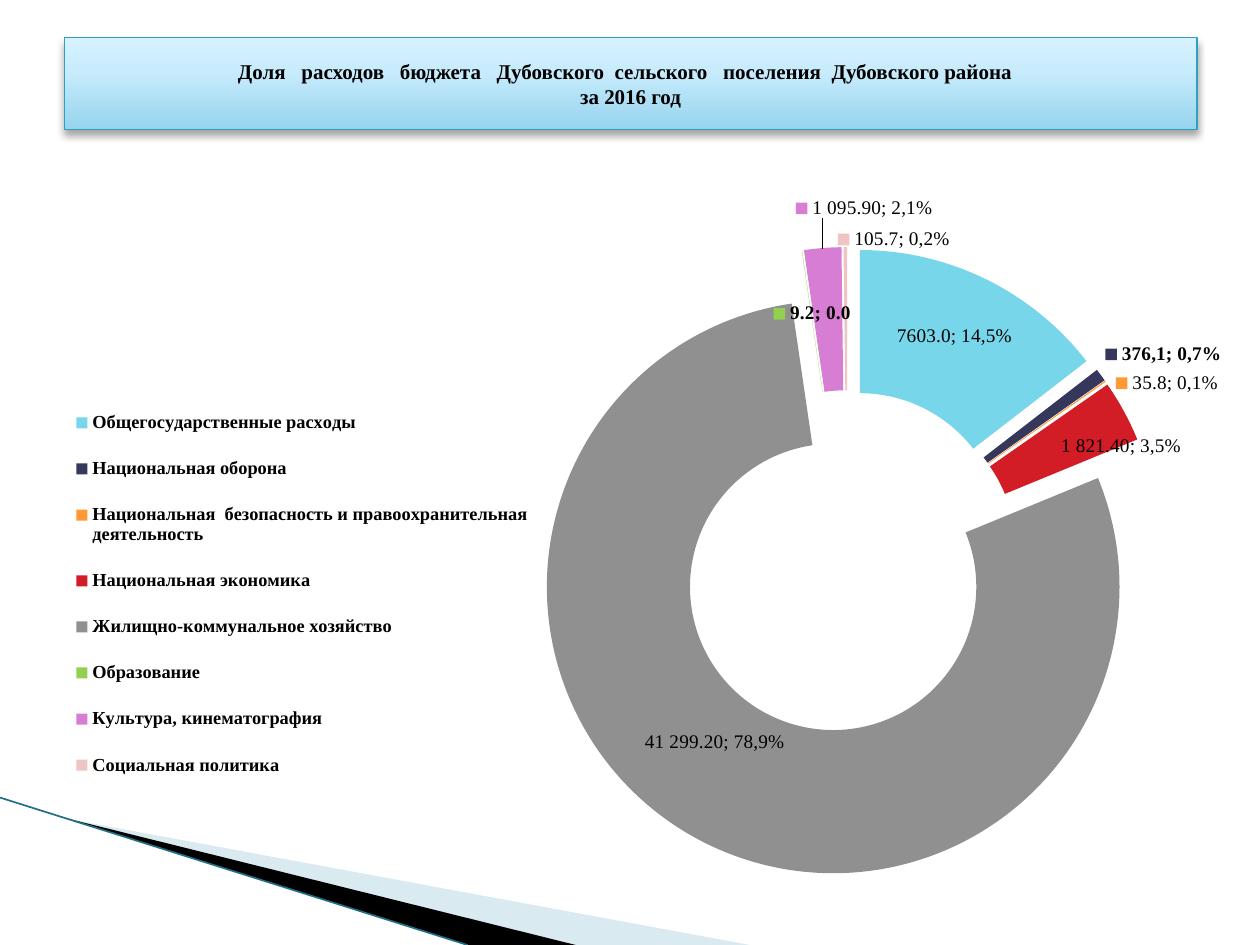
from lxml import etree
from pptx import Presentation
from pptx.chart.data import CategoryChartData as Data
from pptx.dml.color import RGBColor
from pptx.enum.chart import XL_CHART_TYPE as Kind, XL_LEGEND_POSITION as Side
from pptx.enum.shapes import MSO_CONNECTOR as Link, MSO_SHAPE as Form
from pptx.enum.text import MSO_ANCHOR as Anchor, PP_ALIGN as Align
from pptx.oxml import parse_xml
from pptx.oxml.ns import nsdecls, qn
from pptx.util import Inches, Pt

WIDE, HIGH = 10, 7.5
FONT = "Times New Roman"
TITLE = ("Доля   расходов   бюджета   Дубовского  сельского   поселения  "
         "Дубовского района  \vза 2016 год")
# name, value, colour, label, bold, key, label shift
ROWS = [
    ("Общегосударственные расходы", 7603, "78D6EA", "7603.0; 14,5%", False, False, (0, -0.01)),
    ("Национальная оборона", 376.1, "35385A", "376,1; 0,7%", True, True, (0.1, -0.08)),
    ("Национальная  безопасность и правоохранительная деятельность", 35.8, "FF9933",
     "35.8; 0,1%", False, True, (0.1, -0.05)),
    ("Национальная экономика", 1821.4, "D21C26", "1 821.40; 3,5%", False, False, (0.05, 0)),
    ("Жилищно-коммунальное хозяйство", 41299.2, "909090", "41 299.20; 78,9%", False, False,
     (-0.01, -0.04)),
    ("Образование", 9.2, "92D050", None, True, True, (0, -0.01)),
    ("Культура, кинематография", 1095.9, "D77DD3", "1 095.90; 2,1%", False, True, (0.03, -0.14)),
    ("Социальная политика", 105.7, "EEC4C4", "105.7; 0,2%", False, True, (0.04, -0.1)),
]


def color(code):
    """Turn a hex string into a colour."""
    return RGBColor.from_string(code)


def place(x, y):
    """Turn shares of the slide into a pair of lengths."""
    return Inches(WIDE * x), Inches(HIGH * y)


def style(font, size, bold, code="000000"):
    """Set the face, size, weight and colour of a font."""
    font.name, font.size, font.bold = FONT, Pt(size), bold
    font.color.rgb = color(code)


def wedge(slide, points, code, alpha=100):
    """Draw a filled outline through points given in slide shares."""
    spots = [place(x, y) for x, y in points]
    pen = slide.shapes.build_freeform(*spots[0])
    pen.add_line_segments(spots[1:], close=True)
    shape = pen.convert_to_shape()
    shape.shadow.inherit = False
    shape.fill.solid()
    shape.fill.fore_color.rgb = color(code)
    shape.line.fill.background()
    tint = shape.fill._xPr.find(".//" + qn("a:srgbClr"))
    etree.SubElement(tint, qn("a:alpha"), val=str(alpha * 1000))


def stroke(slide, start, end, code, width):
    """Draw a straight line between two points in slide shares."""
    line = slide.shapes.add_connector(Link.STRAIGHT, *place(*start), *place(*end))
    line.line.color.rgb = color(code)
    line.line.width = Pt(width)
    etree.SubElement(line._element.spPr, qn("a:effectLst"))


def banner(slide, spot, size, text):
    """Draw the title bar with its gradient and shadow."""
    bar = slide.shapes.add_shape(Form.RECTANGLE, *place(*spot), *place(*size))
    bar.line.color.rgb = color("2DA2BF")
    bar.line.width = Pt(0.75)
    stops = "".join(f'<a:gs pos="{at * 1000}"><a:srgbClr val="{code}"/></a:gs>'
                    for at, code in ((0, "96D4EE"), (65, "C9ECFC"), (100, "D7F2FF")))
    props = bar._element.spPr
    props.find(qn("a:ln")).addprevious(parse_xml(
        f'<a:gradFill {nsdecls("a")}><a:gsLst>{stops}</a:gsLst>'
        '<a:lin ang="16200000" scaled="0"/></a:gradFill>'))
    props.append(parse_xml(
        f'<a:effectLst {nsdecls("a")}><a:outerShdw blurRad="{Pt(4)}" dist="{Pt(3)}" '
        'dir="5400000" rotWithShape="0"><a:srgbClr val="000000"><a:alpha val="35000"/>'
        '</a:srgbClr></a:outerShdw></a:effectLst>'))
    frame = bar.text_frame
    frame.word_wrap, frame.vertical_anchor = True, Anchor.MIDDLE
    para = frame.paragraphs[0]
    para.text, para.alignment = text, Align.CENTER
    for run in para.runs:
        style(run.font, 12, True)


def arrange(node, index, **parts):
    """Give a chart part a manual layout as its child at index."""
    old = node.find(qn("c:layout"))
    if old is not None:
        node.remove(old)
    body = "".join(f'<c:{tag} val="{val}"/>' for tag, val in parts.items())
    node.insert(index, parse_xml(
        f'<c:layout {nsdecls("c")}><c:manualLayout>{body}</c:manualLayout></c:layout>'))


def mark(point, label, bold, key, shift):
    """Label one slice, moved by a share of the chart."""
    tag = point.data_label
    if label:
        para = tag.text_frame.paragraphs[0]
        para.text = label
        style(para.runs[0].font, 11, bold)
    else:
        style(tag.font, 11, bold)
    node = tag._get_or_add_dLbl()
    arrange(node, 1, x=shift[0], y=shift[1])
    node.find(qn("c:showLegendKey")).set("val", str(int(key)))
    node.find(qn("c:showPercent")).set("val", "1")
    etree.SubElement(node, qn("c:separator")).text = "; "


def ring(slide, spot, size):
    """Draw the doughnut chart of spending with its legend."""
    data = Data(number_format="0.0")
    data.categories = [row[0] for row in ROWS]
    data.add_series("Series 1", [row[1] for row in ROWS])
    chart = slide.shapes.add_chart(
        Kind.DOUGHNUT_EXPLODED, *place(*spot), *place(*size), data).chart
    chart.has_title = False
    style(chart.font, 11, False)
    chart.has_legend = True
    legend = chart.legend
    legend.position, legend.include_in_layout = Side.TOP, False
    style(legend.font, 10.5, True)
    arrange(legend._element, 1, xMode="edge", yMode="edge", x=0.01, y=0.3, w=0.39, h=0.52)
    area = chart._chartSpace.chart.plotArea
    arrange(area, 0, layoutTarget="inner", xMode="edge", yMode="edge",
            x=0.396, y=0.125, w=0.523, h=0.79)
    plot = chart.plots[0]
    plot.vary_by_categories = True
    series = plot.series[0]
    labels = series.data_labels
    labels.show_value = labels.show_percentage = True
    labels.number_format, labels.number_format_is_linked = "0.0", False
    style(labels.font, 11, True)
    for i, (_, _, code, *label) in enumerate(ROWS):
        point = series.points[i]
        point.format.fill.solid()
        point.format.fill.fore_color.rgb = color(code)
        mark(point, *label)
    node = series._element
    for old in node.findall(qn("c:explosion")):
        node.remove(old)
    node.find(qn("c:dPt")).addprevious(
        parse_xml(f'<c:explosion {nsdecls("c")} val="20"/>'))


def main():
    """Build the slide and save it."""
    deck = Presentation()
    deck.slide_width, deck.slide_height = place(1, 1)
    slide = deck.slides.add_slide(deck.slide_layouts[6])
    wedge(slide, [(0.055, 0.867), (0.595, 1), (0.456, 1)], "A0CBDC", 40)
    wedge(slide, [(0.053, 0.866), (0.457, 1), (0.372, 1)], "000000")
    wedge_end = (0.371, 1)
    stroke(slide, (0, 0.844), wedge_end, "1F6F85", 0.95)
    ring(slide, (0.044, 0.156), (0.956, 0.844))
    banner(slide, (0.051, 0.04), (0.899, 0.097), TITLE)
    deck.save("out.pptx")


if __name__ == "__main__":
    main()
